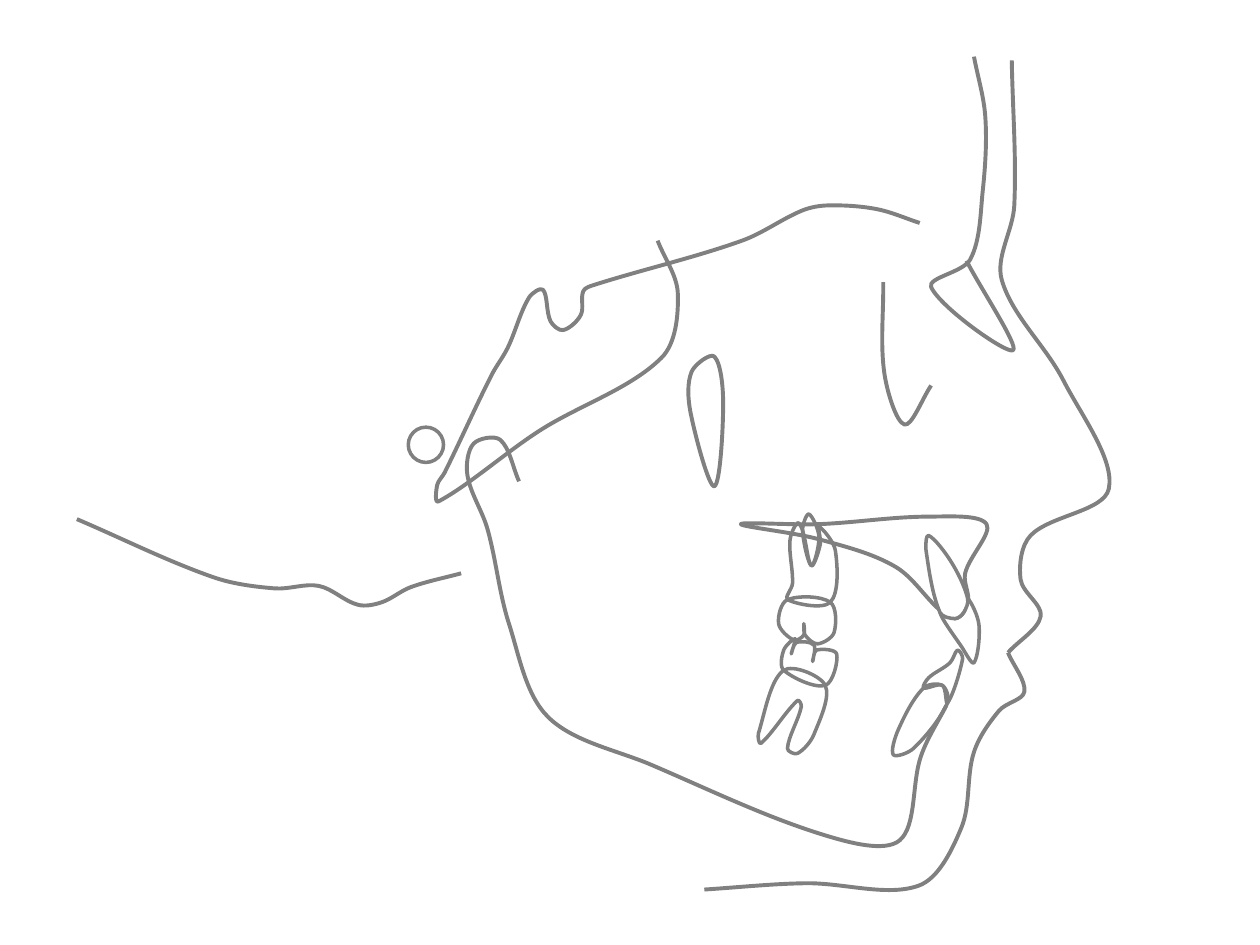
from dataclasses import dataclass
from math import dist

from lxml import etree
from pptx import Presentation
from pptx.dml.color import RGBColor
from pptx.enum.shapes import MSO_SHAPE
from pptx.oxml.ns import qn
from pptx.util import Emu, Pt

OVAL = MSO_SHAPE.OVAL
PX = 9144  # 100 px to the inch
BLANK_LAYOUT = 6
COLORS = {"line": "808080", "tooth": "FFFFFF"}


@dataclass(frozen=True)
class Contour:
    """Anchors of a smooth line."""
    anchors: tuple
    closed: bool = False
    filled: bool = False
    weight: float = 2.25


def tooth(*anchors: tuple, filled: bool = False) -> Contour:
    return Contour(anchors, closed=True, filled=filled, weight=2)


SKULL_BASE = Contour((
    (730, 177), (696, 166), (658, 163), (637, 167), (589, 191), (472, 226), (463, 231), (461, 250),
    (447, 262), (437, 255), (431, 230), (420, 236), (403, 276), (390, 298), (353, 375), (347, 385),
    (348, 398), (428, 342), (525, 284), (538, 233), (522, 191)))
NASAL_BONE = Contour((
    (773, 45), (782, 93), (780, 151), (770, 206), (739, 228), (804, 278), (767, 207)))
PTERYGOID_FISSURE = Contour((
    (567, 386), (574, 320), (567, 283), (549, 295), (548, 327)), closed=True)
ORBIT = Contour(((739, 306), (718, 337), (702, 297), (701, 224)))
FACE_PROFILE = Contour((
    (803, 48), (805, 163), (795, 222), (844, 302), (880, 388), (818, 425), (810, 460), (826, 489),
    (800, 518)))
CHIN_PROFILE = Contour((
    (800, 518), (813, 549), (793, 564), (773, 597), (763, 657), (729, 703), (639, 701), (559, 706)))
PALATE = Contour((
    (753, 489), (711, 450), (650, 428), (588, 416), (650, 416), (738, 410), (783, 416), (766, 455),
    (768, 479)), closed=True)
MANDIBLE = Contour((
    (412, 382), (397, 349), (376, 352), (371, 377), (387, 420), (404, 495), (435, 569), (517, 607),
    (655, 663), (714, 667), (731, 600), (751, 560)))
OCCIPUT = Contour((
    (366, 455), (326, 466), (303, 478), (284, 480), (253, 465), (218, 467), (169, 458), (61, 412)))

# Necks are the edges that a crown and its root share.
UPPER_INCISOR_NECK = ((768, 475), (765, 486), (758, 491), (746, 486))
UPPER_MOLAR_NECK = ((659, 478), (625, 476))
LOWER_INCISOR_NECK = ((752, 558), (748, 544), (733, 546))
LOWER_MOLAR_NECK = ((655, 544), (622, 532))

UPPER_TEETH = (
    tooth(*UPPER_INCISOR_NECK, (763, 513), (773, 526), (777, 496), filled=True),
    tooth(*UPPER_INCISOR_NECK, (735, 437), (737, 425), (755, 446), filled=True),
    tooth(*UPPER_MOLAR_NECK, (618, 495), (630, 508), (638, 504), (638, 495), (639, 504),
          (649, 511), (662, 502)),
    tooth(*UPPER_MOLAR_NECK, (629, 463), (627, 429), (633, 415), (637, 421), (644, 449),
          (651, 432), (650, 418), (663, 437)),
    tooth((650, 426), (644, 449), (637, 421), (642, 408)),
)
LOWER_TEETH = (
    tooth(*LOWER_INCISOR_NECK, (737, 538), (754, 526), (760, 516), (764, 523)),
    tooth(*LOWER_INCISOR_NECK, (713, 579), (709, 599), (725, 594)),
    tooth(*LOWER_MOLAR_NECK, (622, 516), (631, 507), (628, 519), (632, 510), (646, 512),
          (645, 525), (648, 516), (664, 519)),
    tooth(*LOWER_MOLAR_NECK, (602, 582), (604, 590), (633, 556), (636, 561), (625, 594),
          (633, 598), (646, 583)),
)

FACE = (SKULL_BASE, NASAL_BONE, PTERYGOID_FISSURE, ORBIT, FACE_PROFILE, CHIN_PROFILE)
JAWS = ((PALATE, *UPPER_TEETH), (MANDIBLE, *LOWER_TEETH))


def style(shape, weight: float, filled: bool = False) -> None:
    shape.shadow.inherit = False
    shape.line.color.rgb = RGBColor.from_string(COLORS["line"])
    shape.line.width = Pt(weight)
    if filled:
        shape.fill.solid()
        shape.fill.fore_color.rgb = RGBColor.from_string(COLORS["tooth"])
    else:
        shape.fill.background()


def tangent(before: tuple, here: tuple, after: tuple) -> list:
    """Return the direction at an anchor; it shrinks towards zero at a sharp turn."""
    length = dist(before, here) + dist(here, after)
    return [(a - b) / length for b, a in zip(before, after)]


def draw_contour(shapes, contour: Contour) -> None:
    points = list(contour.anchors)
    if contour.closed:
        points.append(points[0])
        padded = [points[-2], *points, points[1]]
    else:
        padded = [points[0], *points, points[-1]]
    tangents = [tangent(*trio) for trio in zip(padded, points, padded[2:])]

    builder = shapes.build_freeform(*(value * PX for value in points[0]), scale=1.0)
    builder.add_line_segments([(x * PX, y * PX) for x, y in points[1:]], close=False)
    shape = builder.convert_to_shape()

    left, top = (min(values) for values in zip(*points))
    segments = list(shape.element.iter(qn("a:lnTo")))
    for index, segment in enumerate(segments):
        start, end = points[index:index + 2]
        reach = dist(start, end) / 3
        leaving = [p + t * reach for p, t in zip(start, tangents[index])]
        arriving = [p - t * reach for p, t in zip(end, tangents[index + 1])]
        segment.tag = qn("a:cubicBezTo")
        for place, (x, y) in enumerate((leaving, arriving)):
            handle = etree.Element(qn("a:pt"), x=str(round((x - left) * PX)),
                                   y=str(round((y - top) * PX)))
            segment.insert(place, handle)
    style(shape, contour.weight, contour.filled)


def draw_contours(shapes, contours: tuple) -> None:
    for contour in contours:
        draw_contour(shapes, contour)


def main() -> None:
    deck = Presentation()
    deck.slide_width, deck.slide_height = Emu(1000 * PX), Emu(750 * PX)
    shapes = deck.slides.add_slide(deck.slide_layouts[BLANK_LAYOUT]).shapes
    draw_contours(shapes, FACE)
    ear_canal = shapes.add_shape(OVAL, *(Emu(value * PX) for value in (324, 339, 28, 28)))
    style(ear_canal, weight=2)
    for jaw in JAWS:
        draw_contours(shapes.add_group_shape().shapes, jaw)
    draw_contour(shapes, OCCIPUT)
    deck.save("out.pptx")


if __name__ == "__main__":
    main()
